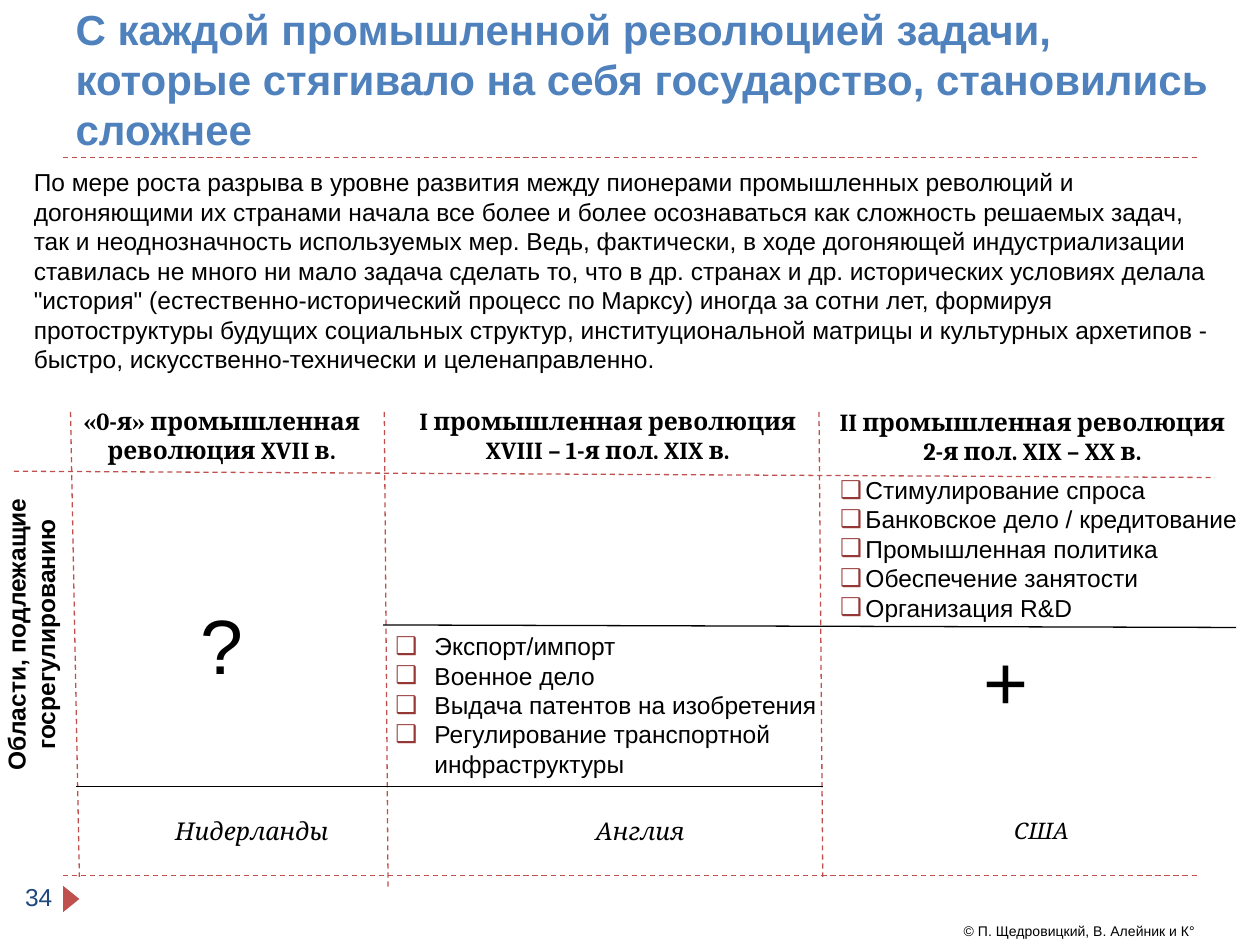
from dataclasses import dataclass

from lxml.etree import SubElement
from pptx import Presentation
from pptx.dml.color import RGBColor
from pptx.enum.dml import MSO_LINE_DASH_STYLE as DASH
from pptx.enum.shapes import MSO_CONNECTOR as CONNECTOR, MSO_SHAPE as SHAPE
from pptx.enum.text import MSO_ANCHOR as ANCHOR, MSO_AUTO_SIZE as AUTO_SIZE, PP_ALIGN as ALIGN
from pptx.oxml.ns import qn
from pptx.util import Pt


@dataclass(frozen=True)
class Theme:
    """Colours, fonts and type sizes of the slide."""
    title: str = "4F81BD"
    number: str = "1F497D"
    accent: str = "C0504D"
    bullet: str = "953735"
    text: str = "000000"
    paper: str = "FFFFFF"
    sans: str = "Arial"
    serif: str = "Cambria"
    title_size: int = 24
    body_size: int = 14
    small_size: int = 13
    credit_size: int = 8
    symbol_size: int = 44


THEME = Theme()

TITLE = ("С каждой промышленной революцией задачи, которые стягивало на себя "
         "государство, становились сложнее")
INTRO = (
    "По мере роста разрыва в уровне развития между пионерами промышленных революций и "
    "догоняющими их странами начала все более и более осознаваться как сложность решаемых "
    "задач, так и неоднозначность используемых мер. Ведь, фактически, в ходе догоняющей "
    "индустриализации ставилась не много ни мало задача сделать то, что в др. странах и др. "
    "исторических условиях делала \"история\" (естественно-исторический процесс по Марксу) "
    "иногда за сотни лет, формируя протоструктуры будущих социальных структур, "
    "институциональной матрицы и культурных архетипов - быстро, "
    "искусственно-технически и целенаправленно."
)
HEADINGS = [
    ("«0-я» промышленная революция XVII в.", (42.48, 228.24, 168.48, 45.36), 0),
    ("I промышленная революция\nXVIII – 1-я пол. XIX в.", (229.68, 228.24, 235.44, 41.04), 7.2),
    ("II промышленная революция\n2-я пол. XIX – XX в.", (465.12, 228.96, 249.84, 41.04), 7.2),
]
COUNTRIES = [
    ("Нидерланды", (87.84, 462.96, 112.32, 24.48), THEME.body_size),
    ("Англия", (329.04, 462.96, 73.44, 23.76), THEME.body_size),
    ("США", (566.64, 462.96, 56.88, 23.04), THEME.small_size),
]
TASKS = [
    ("Экспорт/импорт\nВоенное дело\nВыдача патентов на изобретения\n"
     "Регулирование транспортной инфраструктуры", (218.88, 357.12, 254.88, 92.16), 22.32),
    ("Стимулирование спроса\nБанковское дело / кредитование\nПромышленная политика\n"
     "Обеспечение занятости\nОрганизация R&D", (473.04, 267.84, 241.2, 92.16), 14.4),
]
SYMBOLS = [
    ("+", (555.12, 358.56, 40.32, 60.48)),
    ("?", (107.28, 337.68, 39.6, 60.48)),
]
DASHED_LINES = [
    (36, 500.4, 684, 500.4),
    (36, 90, 684, 90),
    (7.92, 269.28, 694.08, 272.88),
    (40.32, 235.44, 45.36, 501.12),
    (219.6, 235.44, 221.76, 506.88),
    (468, 235.44, 470.16, 501.12),
]
SOLID_LINES = [
    (218.88, 357.12, 706.32, 358.56),
    (43.2, 449.28, 470.16, 449.28),
]


def write_text(shape, text, *, size=THEME.body_size, font=THEME.sans, color=THEME.text,
               bold=False, italic=False, align=ALIGN.LEFT, anchor=ANCHOR.TOP,
               wrap=True, side_inset=7.2, space_after=0, bullet_indent=0):
    """Write one paragraph per line of text and format them all alike."""
    frame = shape.text_frame
    frame.text = text
    frame.auto_size = AUTO_SIZE.NONE
    frame.word_wrap = wrap
    frame.vertical_anchor = anchor
    frame.margin_left = frame.margin_right = Pt(side_inset)
    for paragraph in frame.paragraphs:
        paragraph.alignment = align
        paragraph.space_after = Pt(space_after)
        if bullet_indent:
            add_bullet(paragraph, bullet_indent)
        for run in paragraph.runs:
            run.font.name = font
            run.font.size = Pt(size)
            run.font.bold = bold
            run.font.italic = italic
            run.font.color.rgb = RGBColor.from_string(color)


def add_bullet(paragraph, indent):
    """Give a paragraph a box bullet with a hanging indent."""
    properties = paragraph._p.get_or_add_pPr()
    properties.set("marL", str(Pt(indent)))
    properties.set("indent", str(-Pt(indent)))
    color = SubElement(properties, qn("a:buClr"))
    SubElement(color, qn("a:srgbClr"), val=THEME.bullet)
    SubElement(properties, qn("a:buFont"), typeface=THEME.sans)
    SubElement(properties, qn("a:buChar"), char="❑")


def add_title(slide, text, box):
    """Place and format the title placeholder."""
    title = slide.shapes.title
    title.left, title.top, title.width, title.height = map(Pt, box)
    write_text(title, text, size=THEME.title_size, color=THEME.title, bold=True,
               anchor=ANCHOR.MIDDLE)


def add_label(slide, text, box, **text_format):
    """Add a text box and return it."""
    label = slide.shapes.add_textbox(*map(Pt, box))
    write_text(label, text, **text_format)
    return label


def add_filled_shape(slide, kind, box, fill):
    """Add a preset shape with a plain fill and no outline."""
    shape = slide.shapes.add_shape(kind, *map(Pt, box))
    shape.shadow.inherit = False
    shape.fill.solid()
    shape.fill.fore_color.rgb = RGBColor.from_string(fill)
    shape.line.fill.background()
    return shape


def add_panel(slide, text, box, **text_format):
    """Add a paper-coloured rectangle with text."""
    write_text(add_filled_shape(slide, SHAPE.RECTANGLE, box, THEME.paper), text, **text_format)


def add_rule(slide, ends, color, dash=None):
    """Add a thin straight line."""
    rule = slide.shapes.add_connector(CONNECTOR.STRAIGHT, *map(Pt, ends))
    rule.line.width = Pt(0.75)
    rule.line.color.rgb = RGBColor.from_string(color)
    if dash:
        rule.line.dash_style = dash
    SubElement(rule._element.spPr, qn("a:effectLst"))


def main():
    """Build the slide and save it."""
    presentation = Presentation()
    presentation.slide_width, presentation.slide_height = Pt(720), Pt(540)
    slide = presentation.slides.add_slide(presentation.slide_layouts[5])

    add_title(slide, TITLE, (36, 0, 678, 90))
    add_panel(slide, INTRO, (12.24, 92.16, 693.36, 126))

    for text, box, inset in HEADINGS:
        add_label(slide, text, box, font=THEME.serif, bold=True, align=ALIGN.CENTER,
                  side_inset=inset)
    for text, box, size in COUNTRIES:
        add_panel(slide, text, box, size=size, font=THEME.serif, italic=True,
                  align=ALIGN.CENTER)
    side_label = add_label(slide, "Области, подлежащие госрегулированию",
                           (-2.88, 252.72, 48.24, 219.6), bold=True, align=ALIGN.CENTER,
                           space_after=6)
    side_label.text_frame._txBody.bodyPr.set("vert", "vert270")
    for text, box, indent in TASKS:
        add_label(slide, text, box, bullet_indent=indent)
    for text, box in SYMBOLS:
        add_label(slide, text, box, size=THEME.symbol_size, wrap=False)

    for ends in DASHED_LINES:
        add_rule(slide, ends, THEME.accent, DASH.DASH)
    for ends in SOLID_LINES:
        add_rule(slide, ends, THEME.text)

    add_label(slide, "34", (7.2, 500.4, 32.4, 28.8), color=THEME.number)
    marker = add_filled_shape(slide, SHAPE.ISOSCELES_TRIANGLE, (33.12, 509.04, 15.12, 9.36),
                              THEME.accent)
    marker.rotation = 90
    add_label(slide, "© П. Щедровицкий, В. Алейник и К°", (543.6, 523.44, 174.24, 17.28),
              size=THEME.credit_size)
    presentation.save("out.pptx")


if __name__ == "__main__":
    main()
